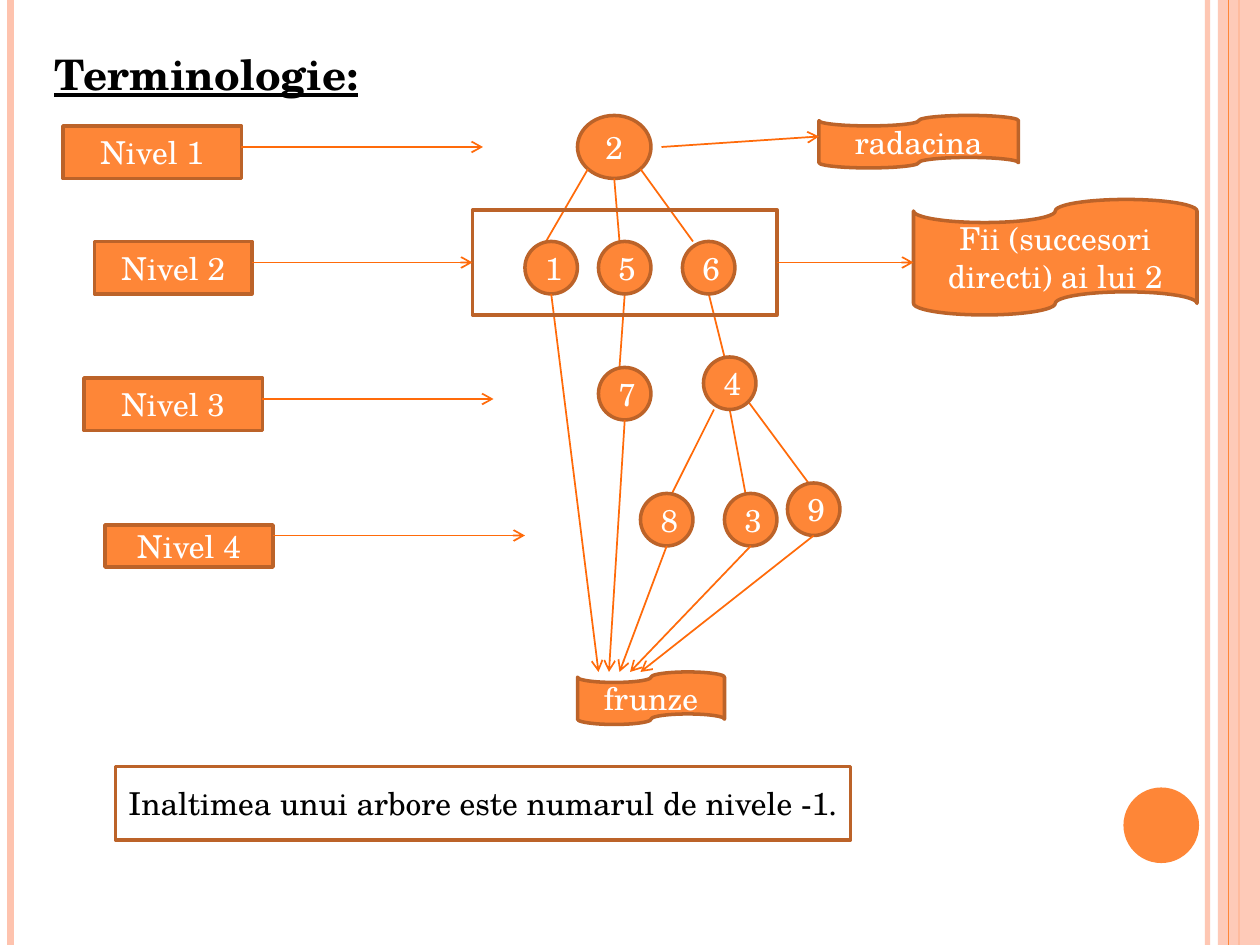
from dataclasses import dataclass

from lxml import etree
from pptx import Presentation
from pptx.dml.color import RGBColor
from pptx.enum.shapes import MSO_CONNECTOR, MSO_SHAPE
from pptx.enum.text import MSO_ANCHOR, PP_ALIGN
from pptx.oxml.ns import qn
from pptx.util import Inches, Pt

RECT, OVAL = MSO_SHAPE.RECTANGLE, MSO_SHAPE.OVAL
TAPE, PROCESS = MSO_SHAPE.FLOWCHART_PUNCHED_TAPE, MSO_SHAPE.FLOWCHART_PROCESS
STRAIGHT = MSO_CONNECTOR.STRAIGHT
CENTER, MIDDLE = PP_ALIGN.CENTER, MSO_ANCHOR.MIDDLE
LEFT_SIDE, RIGHT_SIDE = 1, 3
COLS, ROWS = 120, 90
NODE = 5


@dataclass(frozen=True)
class Theme:
    """Colours, font and sizes of the slide."""
    font: str = "TeX Gyre Schola"
    fill: str = "FE8637"
    border: str = "BC6329"
    link: str = "FF6B0A"
    pale: str = "FEC3AE"
    light: str = "FFFFFF"
    dark: str = "000000"
    title: int = 24
    body: int = 18
    border_width: float = 2
    link_width: float = 1


THEME = Theme()

NODES = {"1": (50, 23), "5": (57, 23), "6": (65, 23), "7": (57, 35),
         "4": (67, 34), "8": (61, 47), "3": (69, 47), "9": (75, 46)}
LEAVES = "17839"
EDGES = [((56, 16.1), (52, 23)), ((58.5, 17), (59, 23)), ((61, 16.1), (66, 23)),
         ((59.5, 28), (59, 35)), ((67.5, 28), (69, 34)), ((68, 39), (64, 47)),
         ((69.5, 39), (71, 47)), ((71.3, 38.3), (77, 46))]
LEVELS = [((6, 12, 17, 5), 46), ((9, 23, 15, 5), 45),
          ((8, 36, 17, 5), 47), ((10, 50, 16, 4), 50)]
TAPES = {"radacina": (78, 11, 19, 5), "Fii (succesori directi) ai lui 2": (87, 19, 27, 11),
         "frunze": (55, 64, 14, 5)}


def grid(*units):
    """Turn grid units into slide lengths."""
    return [Inches(u * 10 / COLS) for u in units]


def rgb(color):
    """Return the colour object of a hex string."""
    return RGBColor.from_string(color)


def set_alpha(fill_parent, percent):
    """Make the solid fill under an element partly transparent."""
    color = fill_parent.find(".//" + qn("a:srgbClr"))
    etree.SubElement(color, qn("a:alpha")).set("val", str(percent * 1000))


def write(tf, text, size, color):
    """Put one paragraph in a text frame and return it."""
    tf.text = text
    tf.word_wrap = True
    p = tf.paragraphs[0]
    font = p.runs[0].font
    font.name, font.size, font.color.rgb = THEME.font, Pt(size), rgb(color)
    return p


def add_box(s, kind, box, text="", fill=THEME.fill, border=THEME.border, color=THEME.light):
    """Add a preset shape with optional centred text."""
    sp = s.shapes.add_shape(kind, *grid(*box))
    sp.shadow.inherit = False
    if fill:
        sp.fill.solid()
        sp.fill.fore_color.rgb = rgb(fill)
    else:
        sp.fill.background()
    if border:
        sp.line.color.rgb = rgb(border)
        sp.line.width = Pt(THEME.border_width)
    else:
        sp.line.fill.background()
    if text:
        sp.text_frame.vertical_anchor = MIDDLE
        write(sp.text_frame, text, THEME.body, color).alignment = CENTER
    return sp


def add_line(s, start, end, color=THEME.link, width=THEME.link_width, arrow=False):
    """Add a straight connector between two grid points."""
    line = s.shapes.add_connector(STRAIGHT, *grid(*start, *end))
    line.line.color.rgb = rgb(color)
    line.line.width = Pt(width)
    props = line.element.spPr
    if arrow:
        etree.SubElement(props.find(qn("a:ln")), qn("a:tailEnd")).set("type", "arrow")
    etree.SubElement(props, qn("a:effectLst"))
    return line


def add_decor(s):
    """Add the edge stripes and the corner disc."""
    inner = add_line(s, (115, 0), (115, ROWS), THEME.pale, 3)
    set_alpha(inner.element.spPr, 93)
    add_line(s, (1, 0), (1, ROWS), THEME.pale, 4.5)
    add_line(s, (118, 0), (118, ROWS), THEME.fill, 1.5)
    band = add_box(s, RECT, (116, 0, 4, ROWS), fill=THEME.pale, border=None)
    set_alpha(band.element.spPr, 87)
    add_line(s, (117, 0), (117, ROWS), THEME.fill, 0.75)
    add_box(s, OVAL, (107, 75, 7.2, 7.2), border=None)


def add_title(s, text):
    """Add the underlined heading."""
    sp = s.shapes.add_textbox(*grid(4, 4, 108, 86))
    font = write(sp.text_frame, text, THEME.title, THEME.dark).runs[0].font
    font.bold = font.underline = True


def add_tree(s):
    """Add the nodes, their edges and the arrows from the leaves."""
    add_box(s, OVAL, (55, 11, 7, 6), "2")
    for start, end in EDGES:
        add_line(s, start, end)
    for label, (col, row) in NODES.items():
        add_box(s, OVAL, (col, row, NODE, NODE), label)
    for i, leaf in enumerate(LEAVES):
        col, row = NODES[leaf]
        add_line(s, (col + NODE / 2, row + NODE), (57 + i, 64), arrow=True)


def add_labels(s):
    """Add the level boxes, the callouts and the frame of the second level."""
    frame = add_box(s, PROCESS, (45, 20, 29, 10), fill=None)
    for text, box in TAPES.items():
        add_box(s, TAPE, box, text)
    add_line(s, (63, 14), (78, 13), arrow=True)
    add_line(s, (74, 25), (87, 25), arrow=True).begin_connect(frame, RIGHT_SIDE)
    for number, (box, tip) in enumerate(LEVELS, 1):
        col, row, width, height = box
        y = row + (height - 1) // 2 if height > 4 else row + 1
        add_box(s, RECT, box, f"Nivel {number}")
        arrow = add_line(s, (col + width, y), (tip, y), arrow=True)
        if number == 2:
            arrow.end_connect(frame, LEFT_SIDE)


def main():
    """Build and save the slide."""
    prs = Presentation()
    prs.slide_width, prs.slide_height = grid(COLS, ROWS)
    s = prs.slides.add_slide(prs.slide_layouts[6])
    add_decor(s)
    add_title(s, "Terminologie:")
    add_tree(s)
    add_labels(s)
    add_box(s, RECT, (11, 73, 70, 7), "Inaltimea unui arbore este numarul de nivele -1.",
            fill=None, color=THEME.dark)
    prs.save("out.pptx")


if __name__ == "__main__":
    main()
